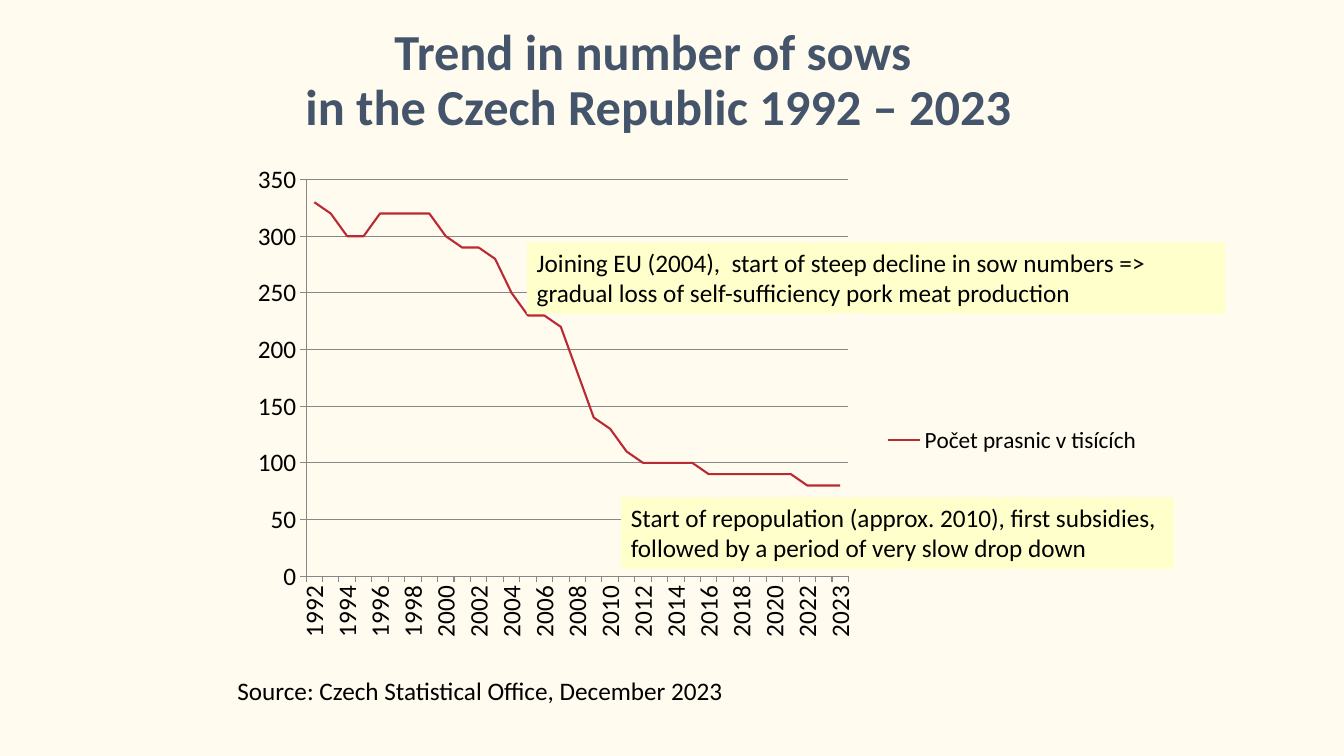
from dataclasses import dataclass

from lxml.etree import fromstring
from pptx import Presentation
from pptx.chart.data import CategoryChartData
from pptx.dml.color import RGBColor
from pptx.enum.chart import XL_CHART_TYPE, XL_LEGEND_POSITION, XL_TICK_MARK
from pptx.enum.shapes import MSO_SHAPE
from pptx.enum.text import MSO_ANCHOR, MSO_AUTO_SIZE, PP_ALIGN
from pptx.oxml.ns import nsdecls
from pptx.util import Pt


@dataclass(frozen=True)
class Theme:
    font: str = "Calibri"
    paper: RGBColor = RGBColor(0xFF, 0xFB, 0xEF)
    heading: RGBColor = RGBColor(0x44, 0x54, 0x6A)
    ink: RGBColor = RGBColor(0, 0, 0)
    note: RGBColor = RGBColor(0xFF, 0xFF, 0xCC)
    grid: RGBColor = RGBColor(0x87, 0x87, 0x87)
    sows: RGBColor = RGBColor(0xBA, 0x2A, 0x32)
    title_size: float = 36
    body_size: float = 18
    legend_size: float = 16.6


def apply(target, values):
    for name, value in values.items():
        setattr(target, name, value)


class SlideBuilder:
    def __init__(self, deck, theme):
        self.theme = theme
        self.page = deck.slides.add_slide(deck.slide_layouts[5])
        self.page.background.fill.solid()
        self.page.background.fill.fore_color.rgb = theme.paper

    def style_font(self, font, size, color, bold=False):
        apply(font, {"name": self.theme.font, "size": Pt(size), "bold": bold})
        font.color.rgb = color

    def title(self, lines, left, top, width, height):
        box = self.page.shapes.title
        apply(box, {"left": Pt(left), "top": Pt(top), "width": Pt(width), "height": Pt(height)})
        frame = box.text_frame
        apply(frame, {"text": "\n".join(lines), "word_wrap": True,
                      "auto_size": MSO_AUTO_SIZE.NONE, "vertical_anchor": MSO_ANCHOR.MIDDLE})
        for para in frame.paragraphs:
            apply(para, {"alignment": PP_ALIGN.CENTER, "line_spacing": 0.9, "space_before": Pt(0)})
            for span in para.runs:
                self.style_font(span.font, self.theme.title_size, self.theme.heading, True)

    def fill_text(self, box, text):
        frame = box.text_frame
        apply(frame, {"text": text, "word_wrap": True, "vertical_anchor": MSO_ANCHOR.TOP,
                      "auto_size": MSO_AUTO_SIZE.SHAPE_TO_FIT_TEXT})
        para = frame.paragraphs[0]
        para.alignment = PP_ALIGN.LEFT
        self.style_font(para.runs[0].font, self.theme.body_size, self.theme.ink)

    def text(self, text, left, top, width, height):
        box = self.page.shapes.add_textbox(Pt(left), Pt(top), Pt(width), Pt(height))
        self.fill_text(box, text)

    def note(self, text, left, top, width, height):
        box = self.page.shapes.add_shape(
            MSO_SHAPE.RECTANGLE, Pt(left), Pt(top), Pt(width), Pt(height))
        box.shadow.inherit = False
        box.fill.solid()
        box.fill.fore_color.rgb = self.theme.note
        box.line.fill.background()
        self.fill_text(box, text)

    def style_line(self, line, color, width):
        line.color.rgb = color
        line.width = Pt(width)

    def style_axis(self, axis):
        apply(axis, {"major_tick_mark": XL_TICK_MARK.OUTSIDE,
                     "minor_tick_mark": XL_TICK_MARK.NONE})
        self.style_font(axis.tick_labels.font, self.theme.body_size, self.theme.ink)
        self.style_line(axis.format.line, self.theme.grid, 0.75)

    def line_chart(self, name, years, values, left, top, width, height, plot_area, legend_corner):
        data = CategoryChartData(number_format="#,##0")
        data.categories = years
        data.add_series(name, values)
        chart = self.page.shapes.add_chart(
            XL_CHART_TYPE.LINE, Pt(left), Pt(top), Pt(width), Pt(height), data).chart
        self.style_font(chart.font, self.theme.body_size, self.theme.ink)
        apply(chart, {"has_title": False, "has_legend": True})
        apply(chart.legend, {"position": XL_LEGEND_POSITION.RIGHT, "include_in_layout": False})
        self.style_font(chart.legend.font, self.theme.legend_size, self.theme.ink)

        for axis in (chart.category_axis, chart.value_axis):
            self.style_axis(axis)
        apply(chart.value_axis, {"minimum_scale": 0, "maximum_scale": 350, "major_unit": 50,
                                 "has_major_gridlines": True})
        apply(chart.value_axis.tick_labels,
              {"number_format": "#,##0", "number_format_is_linked": False})
        self.style_line(chart.value_axis.major_gridlines.format.line, self.theme.grid, 0.75)
        self.turn_labels(chart.category_axis)

        plot = chart.plots[0]
        plot.vary_by_categories = False
        series = plot.series[0]
        series.smooth = False
        self.style_line(series.format.line, self.theme.sows, 1.5)

        area = chart._chartSpace.find("{*}chart/{*}plotArea")
        self.place(area, 0, plot_area, '<c:layoutTarget val="inner"/>')
        self.place(chart.legend._element, 1, legend_corner)

    def turn_labels(self, axis):
        """Turn the labels upright and show every second one."""
        element = axis._element
        body = element.find("{*}txPr/{*}bodyPr")
        body.set("rot", "-5400000")
        body.set("vert", "horz")
        skip = fromstring(f'<c:tickLblSkip {nsdecls("c")} val="2"/>')
        element.find("{*}noMultiLvlLbl").addprevious(skip)

    def place(self, element, index, fractions, target=""):
        """Fix a chart part by x, y and perhaps w, h as fractions of the chart."""
        old = element.find("{*}layout")
        if old is not None:
            element.remove(old)
        sizes = "".join(f'<c:{key} val="{value}"/>' for key, value in zip("xywh", fractions))
        element.insert(index, fromstring(
            f'<c:layout {nsdecls("c")}><c:manualLayout>{target}'
            f'<c:xMode val="edge"/><c:yMode val="edge"/>{sizes}</c:manualLayout></c:layout>'))


def main():
    deck = Presentation()
    apply(deck, {"slide_width": Pt(960), "slide_height": Pt(540)})
    slide = SlideBuilder(deck, Theme())
    slide.title(["Trend in number of sows ", "in the Czech Republic 1992 – 2023"],
                21, 30, 899, 57)
    years = [str(year) for year in range(1992, 2024)] + ["2023"]
    sows = [330, 320, 300, 300, 320, 320, 320, 320, 300, 290, 290,
            280, 250, 230, 230, 220, 180, 140, 130, 110, 100, 100,
            100, 100, 90, 90, 90, 90, 90, 90, 80, 80, 80]
    slide.line_chart("Počet prasnic v tisících", years, sows, 168, 106, 649, 398,
                     plot_area=(0.078, 0.056, 0.597, 0.712), legend_corner=(0.71, 0.49))
    slide.text("Source: Czech Statistical Office, December 2023", 162.5, 479, 446, 29)
    slide.note("Joining EU (2004),  start of steep decline in sow numbers => "
               "gradual loss of self-sufficiency pork meat production", 376.3, 173.2, 499, 51)
    slide.note("Start of repopulation (approx. 2010), first subsidies, "
               "followed by a period of very slow drop down", 443.5, 355.3, 395, 51)
    deck.save("out.pptx")


if __name__ == "__main__":
    main()
